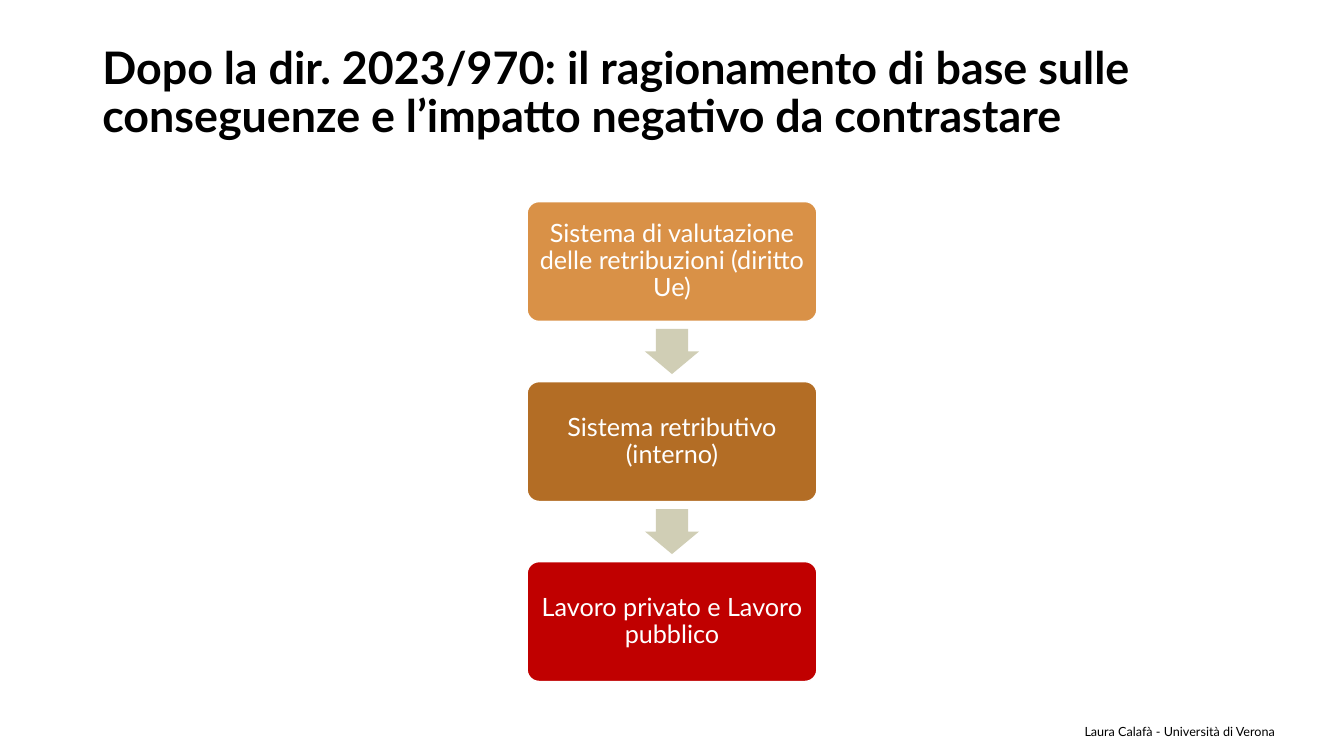
from pptx import Presentation
from pptx.dml.color import RGBColor
from pptx.enum.shapes import MSO_SHAPE
from pptx.enum.text import MSO_ANCHOR, PP_ALIGN
from pptx.util import Pt

HUES = {"black": "000000", "white": "FFFFFF", "sand": "D0CEB5",
        "amber": "D99147", "brown": "B36D25", "red": "C00000"}


class Deck:
    """Hold the slide and its style, and draw each kind of element."""

    font = "Lato"

    def __init__(self, width, height):
        self.show = Presentation()
        self.show.slide_width, self.show.slide_height = Pt(width), Pt(height)
        self.slide = self.show.slides.add_slide(self.show.slide_layouts[6])

    def label(self, shape, words, size, hue, align, anchor, space=1.0, bold=False, inset=None):
        frame = shape.text_frame
        form = {"word_wrap": True, "vertical_anchor": anchor}
        if inset is not None:
            for side in ("left", "top", "right", "bottom"):
                form[f"margin_{side}"] = Pt(inset)
        para = frame.paragraphs[0]
        run = para.add_run()
        run.text = words
        run.font.color.rgb = RGBColor.from_string(HUES[hue])
        styles = (
            (frame, form),
            (para, {"alignment": align, "line_spacing": space}),
            (run.font, {"name": self.font, "size": Pt(size), "bold": bold}),
        )
        for item, values in styles:
            for name, value in values.items():
                setattr(item, name, value)

    def text(self, area, words, size, align, anchor, **style):
        box = self.slide.shapes.add_textbox(*map(Pt, area))
        self.label(box, words, size, "black", align, anchor, **style)

    def shape(self, kind, area, hue, adjust):
        item = self.slide.shapes.add_shape(kind, *map(Pt, area))
        item.shadow.inherit = False
        item.fill.solid()
        item.fill.fore_color.rgb = RGBColor.from_string(HUES[hue])
        item.line.fill.background()
        for spot, value in enumerate(adjust):
            item.adjustments[spot] = value
        return item

    def step(self, area, words, hue):
        box = self.shape(MSO_SHAPE.ROUNDED_RECTANGLE, area, hue, [0.1])
        box.line.color.rgb = RGBColor.from_string(HUES["white"])
        box.line.width = Pt(1)
        self.label(box, words, 18, "white", PP_ALIGN.CENTER, MSO_ANCHOR.MIDDLE,
                   space=0.9, inset=5)

    def arrow(self, mid, level):
        long, wide = 32.2, 38.6
        area = (mid - long / 2, level - wide / 2, long, wide)
        self.shape(MSO_SHAPE.RIGHT_ARROW, area, "sand", [0.6, 0.5]).rotation = 90


def main():
    deck = Deck(960, 540)
    deck.text((66, 28.8, 828, 104.4),
              "Dopo la dir. 2023/970: il ragionamento di base sulle "
              "conseguenze e l’impatto negativo da contrastare",
              32, PP_ALIGN.LEFT, MSO_ANCHOR.TOP, space=0.9, bold=True)

    steps = (
        ("Sistema di valutazione delle retribuzioni (diritto Ue)", "amber"),
        ("Sistema retributivo (interno)", "brown"),
        ("Lavoro privato e Lavoro pubblico", "red"),
    )
    mid, top, wide, high, gap = 480, 144, 207, 85.6, 43
    for row, (words, hue) in enumerate(steps):
        level = top + row * (high + gap)
        if row:
            deck.arrow(mid, level - gap / 2)
        deck.step((mid - wide / 2, level, wide, high), words, hue)

    deck.text((699, 508.3, 221, 28.8), "Laura Calafà - Università di Verona ",
              9, PP_ALIGN.RIGHT, MSO_ANCHOR.MIDDLE)
    deck.show.save("out.pptx")


if __name__ == "__main__":
    main()
